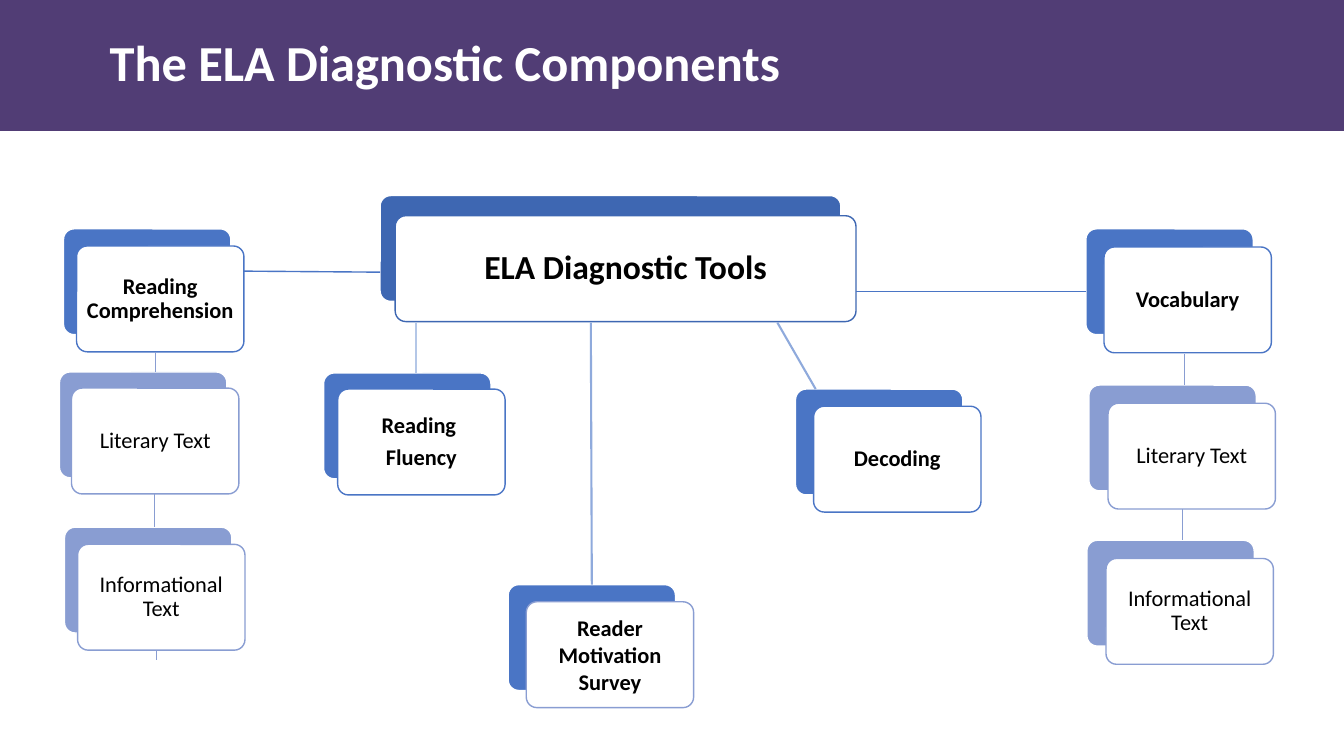
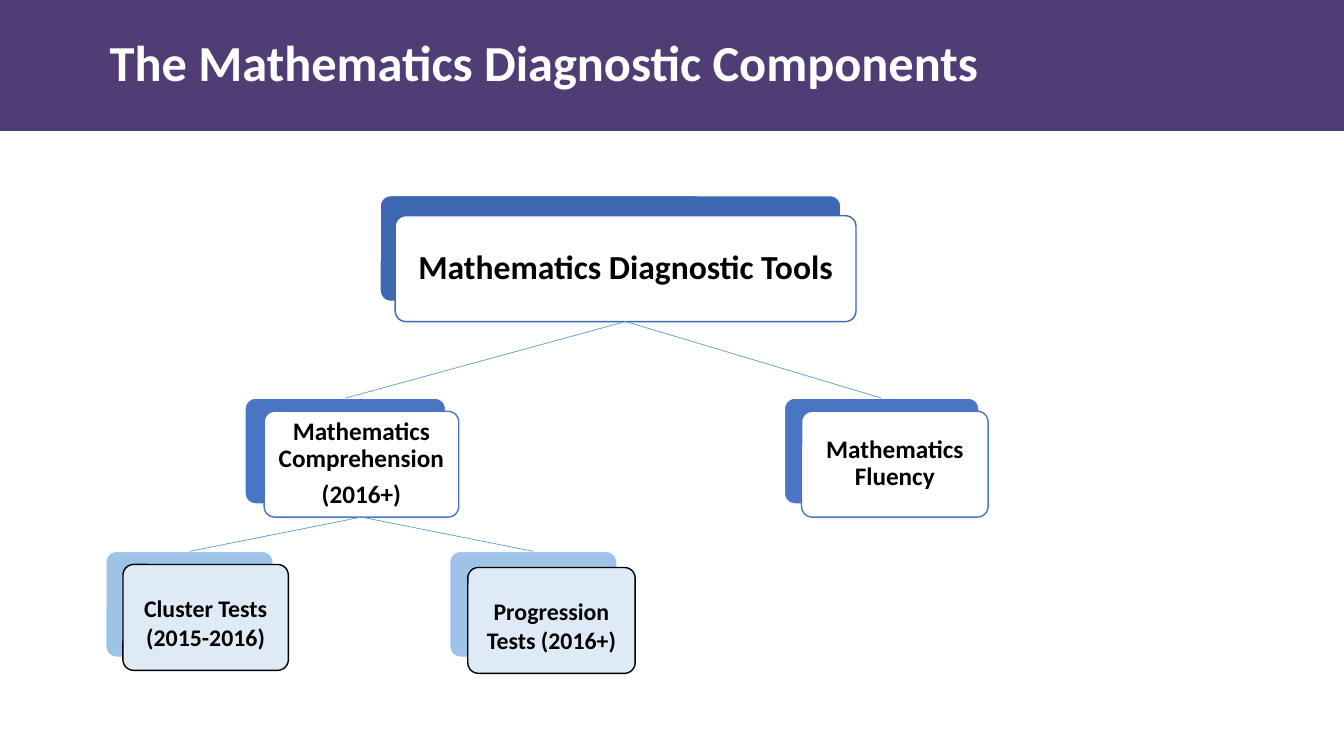
"""Build two slides showing the ELA and Mathematics diagnostic components."""
import pptx
import pptx.util
import pptx.dml.color
import pptx.enum.shapes
import pptx.enum.text
import pptx.oxml.ns
from lxml import etree

Inches, Pt = pptx.util.Inches, pptx.util.Pt
SHAPES = pptx.enum.shapes.MSO_SHAPE
ALIGN = pptx.enum.text.PP_ALIGN
FONT = "Calibri"
CARD_HEIGHT = 1.05
TOP, BOTTOM = 0, 2

COLORS = {
    "band": "513D75", "white": "FFFFFF", "black": "000000",
    "root": "3E67B2", "branch": "4A75C5", "leaf": "899DD2",
    "test_back": "9DC3E6", "test_front": "DEEBF7",
    "pale_link": "B4C7E7", "link": "8FAADC", "tree_link": "5B9BD5",
}

TIGHT = (0.07, 0.07, 0.07, 0.07)
BASE = {"front": "white", "size": 16, "bold": True, "insets": TIGHT, "spacing": 0.9}
STYLES = {
    "root": BASE | {"back": "root", "line": "root", "size": 24},
    "branch": BASE | {"back": "branch", "line": "branch"},
    "wide_branch": BASE | {"back": "branch", "line": "branch", "size": 18},
    "leaf": BASE | {"back": "leaf", "line": "leaf", "bold": False},
    "survey": BASE | {"back": "branch", "line": "leaf", "spacing": 1.0,
                      "insets": (0.1, 0.05, 0.1, 0.05)},
    "test": BASE | {"back": "test_back", "front": "test_front", "line": "black",
                    "size": 17, "spacing": 1.0, "insets": (0.1, 0.2, 0.1, 0.1)},
}

# Each card: key, style, paragraphs, back (left, top, width), front (left, top, width).
# Each line: start, end, color, width; an end is a point or a (card, layer, site).
SLIDES = [
    {
        "title": "The ELA Diagnostic Components",
        "cards": [
            ("tools", "root", ["ELA Diagnostic Tools"], (3.77, 1.94, 4.57), (3.92, 2.14, 4.57)),
            ("comprehension", "branch", ["Reading Comprehension"],
             (0.63, 2.27, 1.66), (0.76, 2.44, 1.66)),
            ("reading literary", "leaf", ["Literary Text"], (0.59, 3.69, 1.66), (0.71, 3.85, 1.66)),
            ("reading informational", "leaf", ["Informational Text"],
             (0.64, 5.23, 1.66), (0.77, 5.4, 1.66)),
            ("vocabulary", "branch", ["Vocabulary"], (10.77, 2.27, 1.66), (10.95, 2.45, 1.66)),
            ("vocabulary literary", "leaf", ["Literary Text"],
             (10.8, 3.82, 1.66), (10.99, 4, 1.66)),
            ("vocabulary informational", "leaf", ["Informational Text"],
             (10.78, 5.36, 1.66), (10.97, 5.54, 1.66)),
            ("decoding", "branch", ["Decoding"], (7.89, 3.86, 1.66), (8.07, 4.03, 1.66)),
            ("survey", "survey", ["Reader Motivation Survey"],
             (5.04, 5.8, 1.66), (5.22, 5.97, 1.66)),
            ("fluency", "branch", ["Reading ", "Fluency"], (3.21, 3.7, 1.66), (3.35, 3.86, 1.66)),
        ],
        "lines": [
            ((2.42, 2.69), (3.77, 2.7), "branch", 1),
            ((8.49, 2.89), (10.77, 2.89), "branch", 1),
            ((1.54, 3.49), (1.54, 3.69), "leaf", 1),
            ((1.53, 4.9), (1.53, 5.23), "leaf", 1),
            ((1.55, 6.45), (1.55, 6.55), "leaf", 1),
            ((11.75, 3.51), (11.75, 3.82), "leaf", 1),
            ((11.73, 5.05), (11.73, 5.36), "leaf", 1),
            ((4.13, 3.2), (4.13, 3.7), "pale_link", 1.5),
            ((7.71, 3.2), (8.09, 3.86), "link", 1.5),
            ((5.86, 3.2), ("survey", "back", TOP), "link", 1.5),
        ],
    },
    {
        "title": "The Mathematics Diagnostic Components",
        "cards": [
            ("tools", "root", ["Mathematics Diagnostic Tools"],
             (3.77, 1.94, 4.57), (3.92, 2.14, 4.57)),
            ("fluency", "wide_branch", ["Mathematics Fluency"],
             (7.78, 3.95, 1.93), (7.95, 4.08, 1.85)),
            ("comprehension", "wide_branch", ["Mathematics Comprehension", "(2016+)"],
             (2.43, 3.95, 1.99), (2.62, 4.08, 1.93)),
            ("progression", "test", ["Progression Tests (2016+)"],
             (4.46, 5.47, 1.66), (4.64, 5.63, 1.66)),
            ("cluster", "test", ["Cluster Tests", "(2015-2016)"],
             (1.05, 5.47, 1.66), (1.22, 5.6, 1.64)),
        ],
        "lines": [
            ((parent, "front", BOTTOM), (child, "back", TOP), "tree_link", 0.5)
            for parent, child in [("tools", "fluency"), ("tools", "comprehension"),
                                  ("comprehension", "cluster"), ("comprehension", "progression")]
        ],
    },
]


def rgb(name):
    return pptx.dml.color.RGBColor.from_string(COLORS[name])


def add_block(slide, kind, box, fill, line=None):
    shape = slide.shapes.add_shape(kind, *(Inches(value) for value in box))
    shape.shadow.inherit = False
    shape.fill.solid()
    shape.fill.fore_color.rgb = rgb(fill)
    if line:
        shape.line.color.rgb = rgb(line)
        shape.line.width = Pt(1)
    else:
        shape.line.fill.background()
    return shape


def write_text(shape, paragraphs, size, bold, color, insets, spacing, align):
    frame = shape.text_frame
    frame.word_wrap = True
    frame.vertical_anchor = pptx.enum.text.MSO_ANCHOR.MIDDLE
    (frame.margin_left, frame.margin_top,
     frame.margin_right, frame.margin_bottom) = (Inches(value) for value in insets)
    for index, text in enumerate(paragraphs):
        paragraph = frame.add_paragraph() if index else frame.paragraphs[0]
        paragraph.alignment = align
        paragraph.line_spacing = spacing
        if spacing < 1 and index < len(paragraphs) - 1:
            paragraph.space_after = Pt(round(size * 0.35, 1))
        run = paragraph.add_run()
        run.text = text
        run.font.name = FONT
        run.font.size = Pt(size)
        run.font.bold = bold
        run.font.color.rgb = rgb(color)


def add_title(slide, title):
    add_block(slide, SHAPES.RECTANGLE, (0, 0, 13.33, 1.3), "band")
    box = slide.shapes.add_textbox(Inches(0.99), Inches(0), Inches(9.96), Inches(1.3))
    write_text(box, [title], 36, True, "white", (0.1, 0.05, 0.1, 0.05), 0.9, ALIGN.LEFT)


def add_card(slide, style_name, paragraphs, back_place, front_place):
    style = STYLES[style_name]
    layers = {}
    for layer, place, line in (("back", back_place, "white"),
                               ("front", front_place, style["line"])):
        layers[layer] = add_block(slide, SHAPES.ROUNDED_RECTANGLE, (*place, CARD_HEIGHT),
                                  style[layer], line)
        layers[layer].adjustments[0] = 0.1
    write_text(layers["front"], paragraphs, style["size"], style["bold"], "black",
               style["insets"], style["spacing"], ALIGN.CENTER)
    return layers


def add_line(slide, cards, start, end, color, width):
    points = [point if len(point) == 2 else (0, 0) for point in (start, end)]
    connector = slide.shapes.add_connector(
        pptx.enum.shapes.MSO_CONNECTOR.STRAIGHT,
        *(Inches(value) for point in points for value in point))
    for target, connect in ((start, connector.begin_connect), (end, connector.end_connect)):
        if len(target) == 3:
            card, layer, site = target
            connect(cards[card][layer], site)
    connector.line.color.rgb = rgb(color)
    connector.line.width = Pt(width)
    etree.SubElement(connector._element.spPr, pptx.oxml.ns.qn("a:effectLst"))


def main():
    presentation = pptx.Presentation()
    presentation.slide_width = Inches(13.33)
    presentation.slide_height = Inches(7.5)
    for content in SLIDES:
        slide = presentation.slides.add_slide(presentation.slide_layouts[6])
        add_title(slide, content["title"])
        cards = {key: add_card(slide, *card) for key, *card in content["cards"]}
        for line in content["lines"]:
            add_line(slide, cards, *line)
    presentation.save("out.pptx")


if __name__ == "__main__":
    main()
